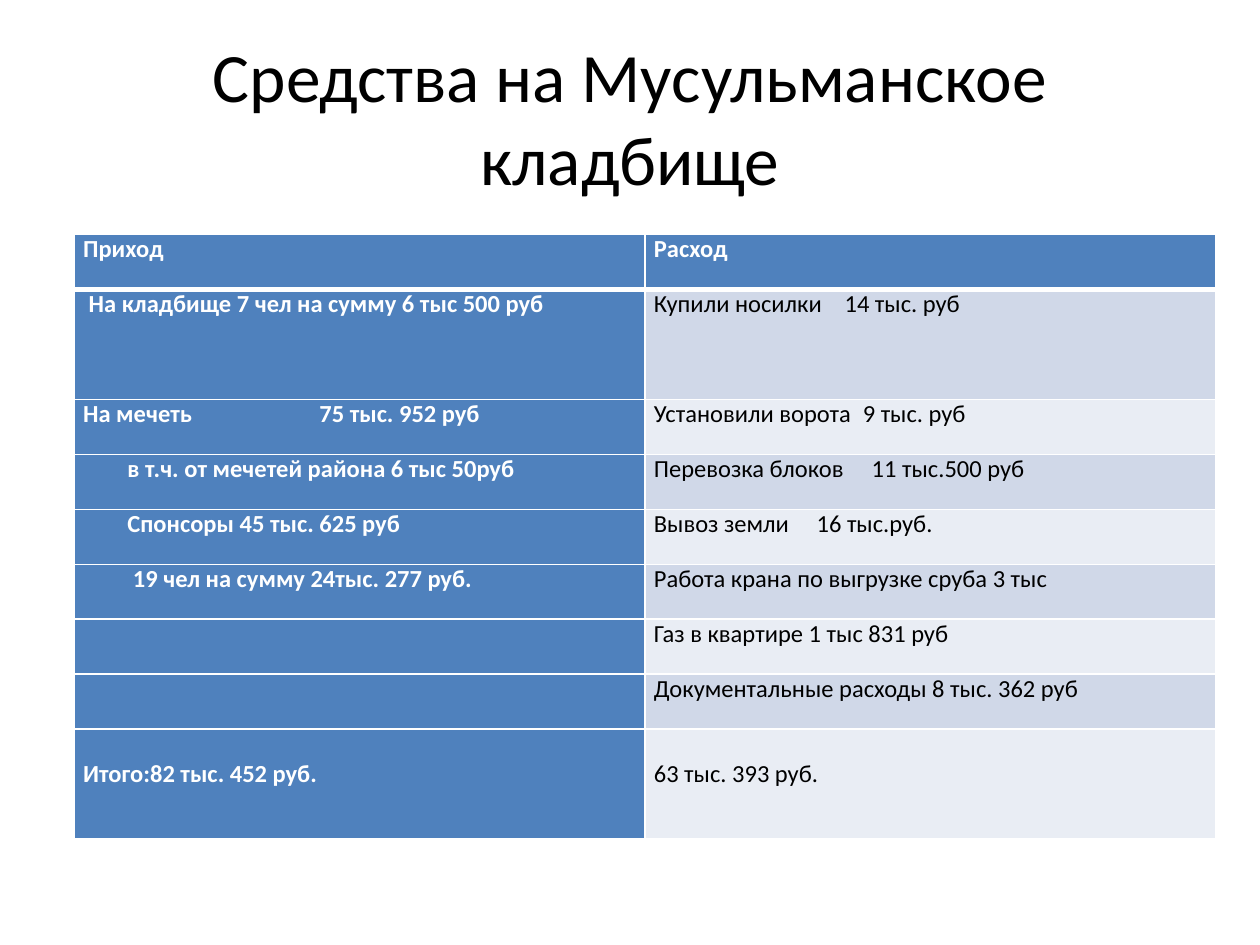
from dataclasses import dataclass

from lxml import etree
from pptx import Presentation
from pptx.dml.color import RGBColor
from pptx.enum.text import MSO_ANCHOR, MSO_AUTO_SIZE, PP_ALIGN
from pptx.oxml.ns import qn
from pptx.util import Pt

CENTER = PP_ALIGN.CENTER
LEFT = PP_ALIGN.LEFT
TOP = MSO_ANCHOR.TOP
MIDDLE = MSO_ANCHOR.MIDDLE
NO_FIT = MSO_AUTO_SIZE.NONE
TITLE_ONLY = 5


@dataclass(frozen=True)
class Theme:
    font: str = "Calibri"
    title_size: float = 39.6
    table_size: float = 14
    dark: str = "000000"
    light: str = "FFFFFF"
    accent: str = "4F81BD"
    bands: tuple = ("D0D8E8", "E9EDF4")
    line: float = 1
    header_line: float = 3


@dataclass(frozen=True)
class Entry:
    text: str = ""
    indent: float = 0
    tab: float = 0
    top: float = 0


ROW_UNIT = 31.42
COLUMN_WIDTH = 326.16
CELL_MARGIN = 5
TITLE = "Средства на Мусульманское кладбище"
ROWS = [
    (1, Entry("Приход"), Entry("Расход")),
    (2, Entry("На кладбище 7 чел на сумму 6 тыс 500 руб", indent=3.2),
     Entry("Купили носилки\t14 тыс. руб", tab=109)),
    (1, Entry("На мечеть\t75 тыс. 952 руб", tab=135),
     Entry("Установили ворота\t9 тыс. руб", tab=119.4)),
    (1, Entry("в т.ч. от мечетей района 6 тыс 50руб", indent=25.3),
     Entry("Перевозка блоков\t11 тыс.500 руб", tab=124.5)),
    (1, Entry("Спонсоры 45 тыс. 625 руб", indent=25.3),
     Entry("Вывоз земли\t16 тыс.руб.", tab=93)),
    (1, Entry("19 чел на сумму 24тыс. 277 руб.", indent=28.5),
     Entry("Работа крана по выгрузке сруба 3 тыс")),
    (1, Entry(), Entry("Газ в квартире 1 тыс 831 руб")),
    (1, Entry(), Entry("Документальные расходы 8 тыс. 362 руб")),
    (2, Entry("Итого:82 тыс. 452 руб.", top=17),
     Entry("63 тыс. 393 руб.", top=17)),
]


def write(frame, text, *, font, size, color, bold=False, align=LEFT, indent=0, tab=0):
    para = frame.paragraphs[0]
    para.alignment = align
    properties = para._p.get_or_add_pPr()
    if indent:
        properties.set("marL", str(Pt(indent)))
    if tab:
        tabs = etree.SubElement(properties, qn("a:tabLst"))
        etree.SubElement(tabs, qn("a:tab"), pos=str(Pt(tab)), algn="l")
    para.font.size = Pt(size)
    if text:
        span = para.add_run()
        span.text = text
        span.font.name = font
        span.font.size = Pt(size)
        span.font.bold = bold
        span.font.color.rgb = RGBColor.from_string(color)


class SlideBuilder:
    def __init__(self, slide, theme):
        self.slide = slide
        self.theme = theme

    def title(self, text, left, top, width, height):
        box = self.slide.shapes.title
        box.left, box.top, box.width, box.height = map(Pt, (left, top, width, height))
        frame = box.text_frame
        frame.word_wrap = True
        frame.auto_size = NO_FIT
        frame.vertical_anchor = MIDDLE
        write(frame, text, font=self.theme.font, size=self.theme.title_size,
              color=self.theme.dark, align=CENTER)

    def table(self, rows, left, top):
        height = ROW_UNIT * sum(units for units, *_ in rows)
        table = self.slide.shapes.add_table(
            len(rows), 2, Pt(left), Pt(top), Pt(2 * COLUMN_WIDTH), Pt(height)).table
        for column in table.columns:
            column.width = Pt(COLUMN_WIDTH)
        for row_index, (units, *entries) in enumerate(rows):
            table.rows[row_index].height = Pt(units * ROW_UNIT)
            for column_index, entry in enumerate(entries):
                self.cell(table.cell(row_index, column_index), entry,
                          row_index, column_index)

    def cell(self, cell, entry, row_index, column_index):
        theme = self.theme
        strong = row_index == 0 or column_index == 0
        cell.margin_left = cell.margin_right = Pt(CELL_MARGIN)
        cell.margin_top = Pt(entry.top)
        cell.margin_bottom = Pt(0)
        cell.vertical_anchor = TOP
        self.borders(cell, row_index)
        cell.fill.solid()
        color = theme.accent if strong else theme.bands[(row_index - 1) % 2]
        cell.fill.fore_color.rgb = RGBColor.from_string(color)
        write(cell.text_frame, entry.text, font=theme.font, size=theme.table_size,
              color=theme.light if strong else theme.dark, bold=strong,
              indent=entry.indent, tab=entry.tab)

    def borders(self, cell, row_index):
        properties = cell._tc.get_or_add_tcPr()
        for side in ("L", "R", "T", "B"):
            thick = (row_index, side) in ((0, "B"), (1, "T"))
            width = self.theme.header_line if thick else self.theme.line
            line = etree.SubElement(properties, qn(f"a:ln{side}"), w=str(Pt(width)))
            fill = etree.SubElement(line, qn("a:solidFill"))
            etree.SubElement(fill, qn("a:srgbClr"), val=self.theme.light)


def main():
    deck = Presentation()
    deck.slide_width, deck.slide_height = Pt(720), Pt(540)
    page = deck.slides.add_slide(deck.slide_layouts[TITLE_ONLY])
    builder = SlideBuilder(page, Theme())
    builder.title(TITLE, 36, 21.6, 648, 90)
    builder.table(ROWS, 42.5, 134)
    deck.save("out.pptx")


if __name__ == "__main__":
    main()
